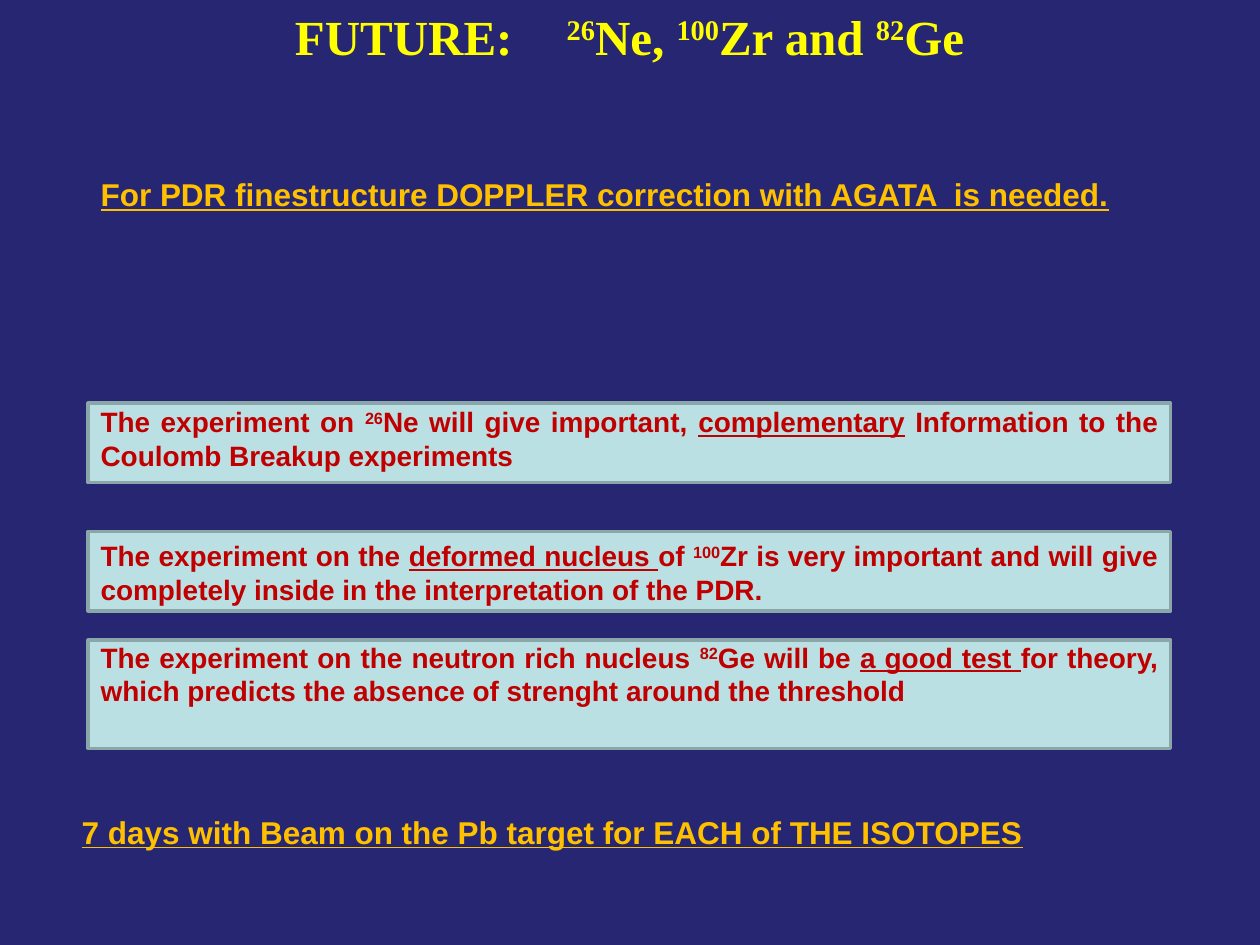
from pptx import Presentation
from pptx.dml.color import RGBColor
from pptx.enum.shapes import MSO_SHAPE
from pptx.enum.text import MSO_ANCHOR, PP_ALIGN
from pptx.util import Pt

RECTANGLE = MSO_SHAPE.RECTANGLE
TOP = MSO_ANCHOR.TOP
CENTER, JUSTIFY = PP_ALIGN.CENTER, PP_ALIGN.JUSTIFY

COLORS = {
    "background": "262673",
    "title": "FFFF00",
    "statement": "FFC000",
    "card_fill": "BBE0E3",
    "card_line": "8AA6A8",
    "card_text": "C00000",
}
SUPERSCRIPT = {"baseline": "30000"}
UNDERLINE = {"underline": True}
WIDE_GAP = {"spc": "2400"}

TITLE = [
    ("FUTURE:", {}), (" ", WIDE_GAP),
    ("26", SUPERSCRIPT), ("Ne, ", {}),
    ("100", SUPERSCRIPT), ("Zr and ", {}),
    ("82", SUPERSCRIPT), ("Ge", {}),
]
STATEMENTS = [
    ((50.4, 96.5, 618.5, 30), "For PDR finestructure DOPPLER correction with AGATA  is needed."),
    ((39.6, 460.8, 675.4, 30), "7 days with Beam on the Pb target for EACH of THE ISOTOPES"),
]
CARDS = [
    (230.4, 45.4, 1, [
        ("The experiment on ", {}), ("26", SUPERSCRIPT),
        ("Ne will give important, ", {}), ("complementary", UNDERLINE),
        (" Information to the Coulomb Breakup experiments", {}),
    ]),
    (303.8, 45.4, 4.2, [
        ("The experiment on the ", {}), ("deformed nucleus ", UNDERLINE),
        ("of ", {}), ("100", SUPERSCRIPT),
        ("Zr is very important and will give completely inside in the "
         "interpretation of the PDR.", {}),
    ]),
    (365.8, 61.9, 0, [
        ("The experiment on the neutron rich nucleus ", {}), ("82", SUPERSCRIPT),
        ("Ge will be ", {}), ("a good test ", UNDERLINE),
        ("for theory, which predicts the absence of strenght around the threshold", {}),
    ]),
]


def rgb(name):
    return RGBColor.from_string(COLORS[name])


def write_text(shape, runs, size, color, font="Arial", align=JUSTIFY, inset_top=3.6):
    frame = shape.text_frame
    frame.word_wrap = True
    frame.vertical_anchor = TOP
    frame.margin_left = frame.margin_right = Pt(7.2)
    frame.margin_top, frame.margin_bottom = Pt(inset_top), Pt(0)
    paragraph = frame.paragraphs[0]
    paragraph.alignment = align
    for text, run_format in runs:
        run = paragraph.add_run()
        run.text = text
        run.font.name = font
        run.font.size = Pt(size)
        run.font.bold = True
        run.font.color.rgb = rgb(color)
        run.font.underline = run_format.get("underline", False)
        for attribute in ("baseline", "spc"):
            if attribute in run_format:
                run._r.get_or_add_rPr().set(attribute, run_format[attribute])


def place_title(slide, box):
    title = slide.shapes.title
    title.left, title.top, title.width, title.height = map(Pt, box)
    write_text(title, TITLE, 28, "title", font="Times New Roman", align=CENTER)


def place_statement(slide, box, text):
    shape = slide.shapes.add_textbox(*map(Pt, box))
    write_text(shape, [(text, UNDERLINE)], 18, "statement")


def place_card(slide, box, runs, inset_top):
    card = slide.shapes.add_shape(RECTANGLE, *map(Pt, box))
    card.shadow.inherit = False
    card.fill.solid()
    card.fill.fore_color.rgb = rgb("card_fill")
    card.line.color.rgb = rgb("card_line")
    card.line.width = Pt(2)
    write_text(card, runs, 16, "card_text", inset_top=inset_top)


def main():
    presentation = Presentation()
    presentation.slide_width, presentation.slide_height = Pt(720), Pt(540)
    slide = presentation.slides.add_slide(presentation.slide_layouts[5])
    slide.background.fill.solid()
    slide.background.fill.fore_color.rgb = rgb("background")
    place_title(slide, (16.6, 0, 686.2, 41))
    for box, text in STATEMENTS:
        place_statement(slide, box, text)
    for top, height, inset_top, runs in CARDS:
        place_card(slide, (50.4, top, 618.5, height), runs, inset_top)
    presentation.save("out.pptx")


if __name__ == "__main__":
    main()
